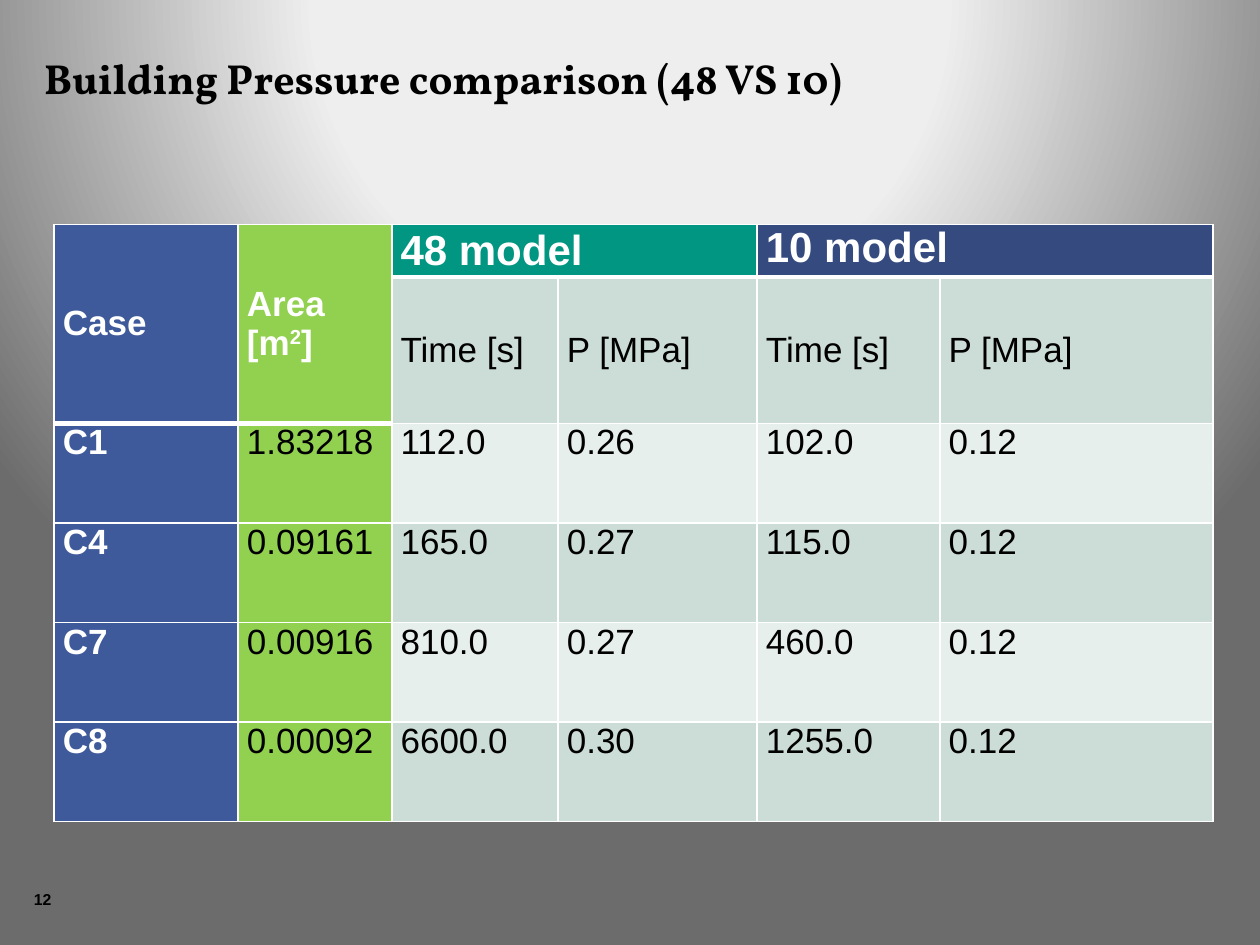
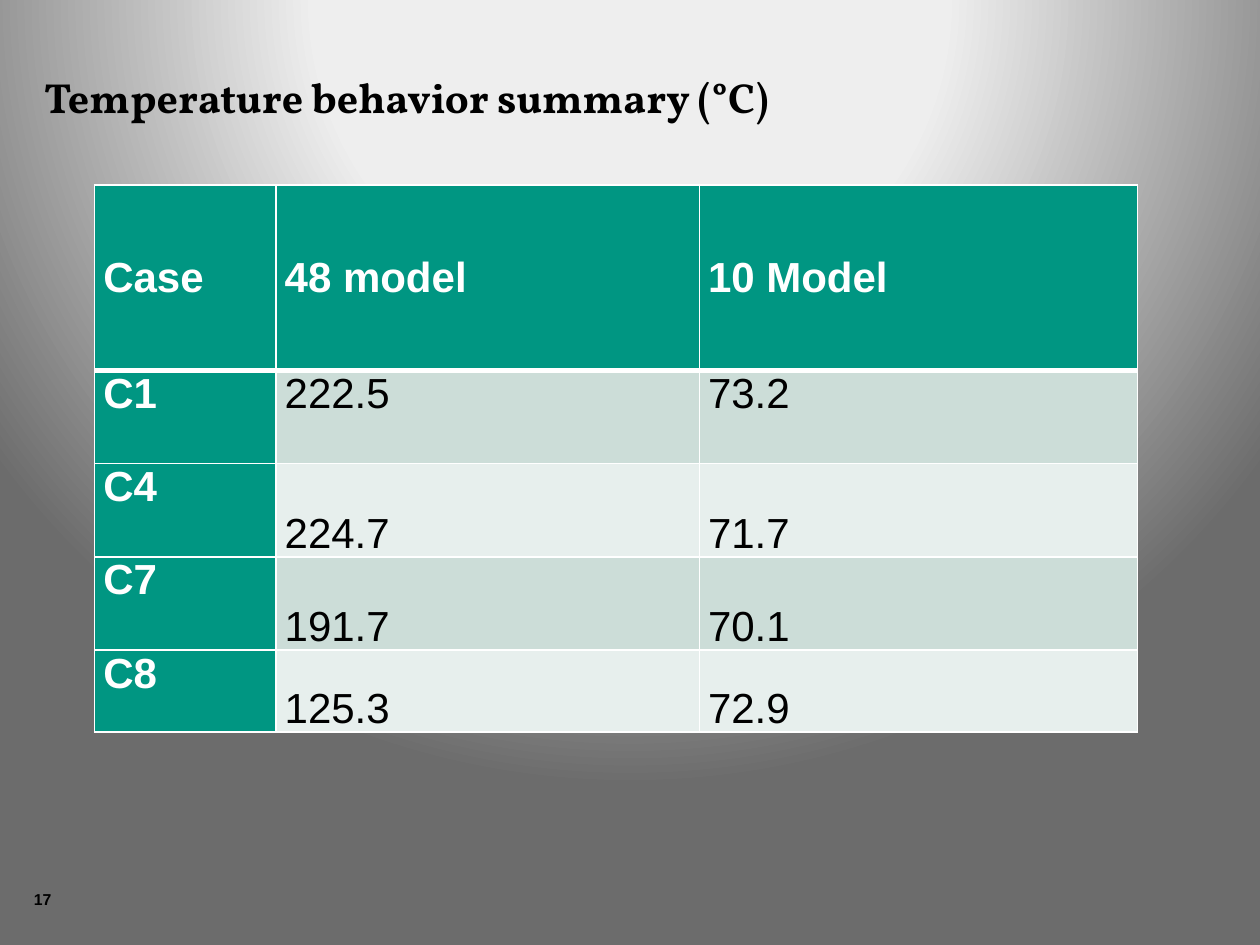
"""Build two slides that compare the 48 and 10 models in tables."""
from dataclasses import dataclass

from pptx import Presentation
from pptx.dml.color import RGBColor
from pptx.enum.text import MSO_ANCHOR, MSO_AUTO_SIZE, PP_ALIGN
from pptx.oxml import parse_xml
from pptx.oxml.ns import nsdecls
from pptx.util import Inches, Pt

TOP, MIDDLE, BOTTOM = MSO_ANCHOR.TOP, MSO_ANCHOR.MIDDLE, MSO_ANCHOR.BOTTOM
LEFT, JUSTIFY = PP_ALIGN.LEFT, PP_ALIGN.JUSTIFY
FIXED = MSO_AUTO_SIZE.NONE


@dataclass(frozen=True)
class Theme:
    black: str = "000000"
    white: str = "FFFFFF"
    blue: str = "3F5A9A"
    navy: str = "354B7F"
    green: str = "92D050"
    teal: str = "009682"
    bands: tuple = ("E7EFED", "CCDDD8")
    glow: tuple = ((0, "F1F1F1"), (40, "EEEEEE"), (100, "6C6C6C"))
    serif: str = "Vollkorn"
    sans: str = "Arial"
    large: int = 24
    body: int = 20
    small: int = 9
    thin: int = 1
    thick: int = 3


def put(item, **values):
    for name, value in values.items():
        setattr(item, name, value)


class Deck:
    def __init__(self, theme):
        self.theme = theme
        self.show = Presentation()
        put(self.show, slide_width=Inches(10), slide_height=Inches(7.5))
        self.shade()

    def shade(self):
        master = self.show.slide_master
        master.background.fill.gradient()
        old = master.element.xpath("p:cSld/p:bg/p:bgPr/a:gradFill")[0]
        stops = "".join(
            f'<a:gs pos="{spot * 1000}"><a:srgbClr val="{tone}"/></a:gs>'
            for spot, tone in self.theme.glow)
        old.getparent().replace(old, parse_xml(
            f'<a:gradFill {nsdecls("a")} rotWithShape="1"><a:gsLst>{stops}</a:gsLst>'
            '<a:path path="circle"><a:fillToRect l="50000" t="-80000" '
            'r="50000" b="180000"/></a:path></a:gradFill>'))

    def font(self, item, face, size, tone, bold=True):
        put(item.font, name=face, size=Pt(size), bold=bold)
        item.font.color.rgb = RGBColor.from_string(tone)

    def place(self, shape, box):
        names = ("left", "top", "width", "height")
        put(shape, **dict(zip(names, map(Inches, box))))

    def label(self, shape, text, face, size, anchor):
        frame = shape.text_frame
        put(frame, text=text, word_wrap=True, auto_size=FIXED,
            vertical_anchor=anchor, margin_left=0, margin_right=0,
            margin_top=0, margin_bottom=0)
        line = frame.paragraphs[0]
        line.alignment = LEFT
        self.font(line, face, size, self.theme.black)

    def page(self, title, box, number):
        look = self.theme
        self.slide = self.show.slides.add_slide(self.show.slide_layouts[5])
        head = self.slide.shapes.title
        self.place(head, box)
        self.label(head, title, look.serif, look.large, BOTTOM)
        foot = self.slide.shapes.add_textbox(
            *map(Inches, (0.27, 7.06, 0.36, 0.24)))
        self.label(foot, str(number), look.sans, look.small, TOP)

    def edge(self, cell, above, below):
        look = self.theme
        sides = {"L": look.thin, "R": look.thin, "T": above, "B": below}
        for side, width in sides.items():
            cell._tc.get_or_add_tcPr().append(parse_xml(
                f'<a:ln{side} {nsdecls("a")} w="{Pt(width)}"><a:solidFill>'
                f'<a:srgbClr val="{look.white}"/></a:solidFill></a:ln{side}>'))

    def words(self, cell, text, size, tone, bold):
        frame = cell.text_frame
        for step, row in enumerate(text.split("\n")):
            line = frame.add_paragraph() if step else frame.paragraphs[0]
            line.alignment = JUSTIFY
            for turn, part in enumerate(row.split("^")):
                run = line.add_run()
                run.text = part
                self.font(run, self.theme.sans, size, tone, bold)
                if turn % 2:
                    run._r.get_or_add_rPr().set("baseline", "30000")

    def grid(self, spot, cols, rows, texts, heads, tops, leads, size, hang, spans=()):
        look = self.theme
        box = (*spot, sum(cols), sum(rows))
        table = self.slide.shapes.add_table(
            len(rows), len(cols), *map(Inches, box)).table
        put(table, first_row=False, horz_banding=False)
        for col, width in zip(table.columns, cols):
            col.width = Inches(width)
        for row, height in zip(table.rows, rows):
            row.height = Inches(height)
        for start, end in spans:
            table.cell(*start).merge(table.cell(*end))
        for y, row in enumerate(texts):
            for x, text in enumerate(row):
                cell = table.cell(y, x)
                self.edge(cell,
                          look.thick if y == heads[x] else look.thin,
                          look.thick if y < heads[x] else look.thin)
                if cell.is_spanned:
                    continue
                top = y == 0 and x in tops
                fill = tops[x] if top else leads.get(x, look.bands[y % 2])
                cell.fill.solid()
                cell.fill.fore_color.rgb = RGBColor.from_string(fill)
                put(cell, margin_left=Inches(0.07), margin_right=Inches(0.07),
                    margin_top=0, margin_bottom=0, vertical_anchor=hang(y, x))
                bold = y == 0 or x == 0
                self.words(cell, text, look.large if top else size,
                           look.white if bold else look.black, bold)


def main():
    look = Theme()
    deck = Deck(look)

    deck.page("Building Pressure comparison (48 VS 10)", (0.35, 0.21, 7.56, 0.61), 12)
    deck.grid(
        (0.43, 1.78), (1.46, 1.22, 1.32, 1.58, 1.45, 2.17),
        (0.42, 1.16) + (0.79,) * 4,
        (("Case", "Area\n[m^2^]", "48 model", "", "10 model", ""),
         ("", "") + ("Time [s]", "P [MPa]") * 2,
         ("C1", "1.83218", "112.0", "0.26", "102.0", "0.12"),
         ("C4", "0.09161", "165.0", "0.27", "115.0", "0.12"),
         ("C7", "0.00916", "810.0", "0.27", "460.0", "0.12"),
         ("C8", "0.00092", "6600.0", "0.30", "1255.0", "0.12")),
        heads=(2, 2, 1, 1, 1, 1),
        tops={2: look.teal, 4: look.navy},
        leads={0: look.blue, 1: look.green},
        size=look.body,
        hang=lambda y, x: MIDDLE if y < 2 and (y, x) != (0, 4) else TOP,
        spans=(((0, 0), (1, 0)), ((0, 1), (1, 1)),
               ((0, 2), (0, 3)), ((0, 4), (0, 5))))

    deck.page("Temperature behavior summary (°C)", (0.35, 0.36, 9.45, 0.61), 17)
    deck.grid(
        (0.75, 1.47), (1.44, 3.36, 3.48), (1.47, 0.74, 0.74, 0.74, 0.65),
        (("Case", "48 model", "10 Model"),
         ("C1", "222.5", "73.2"),
         ("C4", "224.7", "71.7"),
         ("C7", "191.7", "70.1"),
         ("C8", "125.3", "72.9")),
        heads=(1, 1, 1),
        tops={1: look.teal, 2: look.teal},
        leads={0: look.teal},
        size=look.large,
        hang=lambda y, x: MIDDLE if y == 0 else BOTTOM if y > 1 and x else TOP)

    deck.show.save("out.pptx")


if __name__ == "__main__":
    main()
